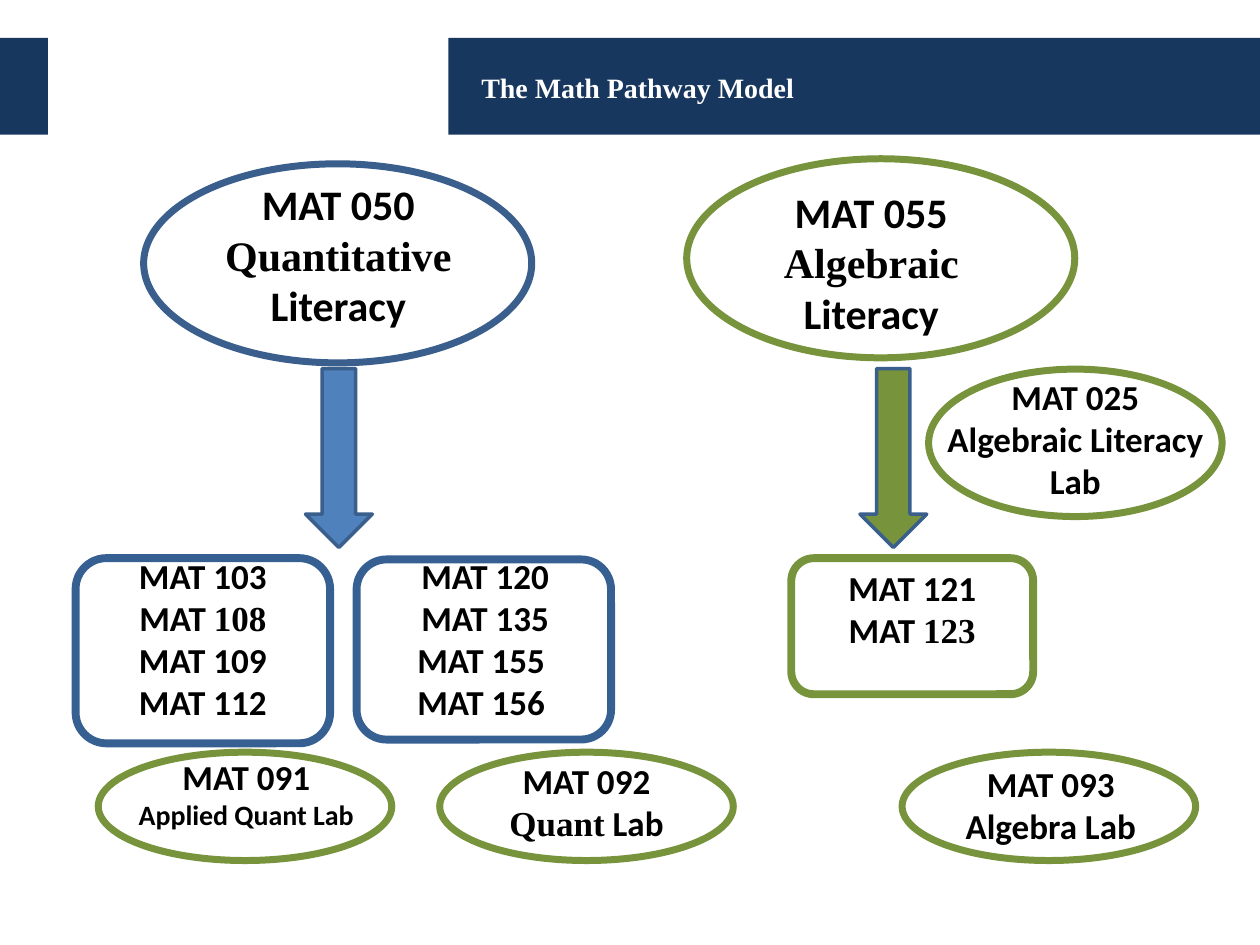
from dataclasses import dataclass

from pptx import Presentation
from pptx.dml.color import RGBColor
from pptx.enum.shapes import MSO_SHAPE as Preset
from pptx.enum.text import MSO_ANCHOR as Anchor, MSO_AUTO_SIZE as AutoSize, PP_ALIGN as Align
from pptx.util import Inches, Pt

NAVY = RGBColor(0x17, 0x37, 0x5E)
BLUE = RGBColor(0x4F, 0x81, 0xBD)
BLUE_EDGE = RGBColor(0x3A, 0x5F, 0x8C)
BLUE_FRAME = RGBColor(0x37, 0x60, 0x92)
GREEN = RGBColor(0x77, 0x93, 0x3C)
WHITE = RGBColor(0xFF, 0xFF, 0xFF)
BLACK = RGBColor(0, 0, 0)
SANS, SERIF = "Calibri", "Times New Roman"

# The slide is a grid of 100 columns by 75 rows
COLS, ROWS = 100, 75
CELL = Inches(0.1)


@dataclass(frozen=True)
class Box:
    col: float
    row: float
    cols: float
    rows: float

    def emu(self) -> list[int]:
        return [round(n * CELL) for n in (self.col, self.row, self.cols, self.rows)]


@dataclass(frozen=True)
class Words:
    text: str
    font: str = SANS
    size: float | None = None


@dataclass(frozen=True)
class Course:
    preset: Preset
    frame: Box
    color: RGBColor
    label: Box
    lines: list[list[Words]]  # one list of runs per paragraph
    size: float = 20


def plain(*lines: str) -> list[list[Words]]:
    return [[Words(line)] for line in lines]


def add_words(paragraph, words: Words, size: float, color: RGBColor) -> None:
    """Add bold text to a paragraph, turning newlines into line breaks."""
    for index, piece in enumerate(words.text.split("\n")):
        if index:
            paragraph.add_line_break()
        run = paragraph.add_run()
        run.text = piece
        run.font.name = words.font
        run.font.size = Pt(words.size or size)
        run.font.bold = True
        run.font.color.rgb = color


def add_form(slide, preset: Preset, box: Box, fill: RGBColor | None = None,
             edge: RGBColor | None = None, width: float = 0):
    form = slide.shapes.add_shape(preset, *box.emu())
    form.shadow.inherit = False
    if fill is None:
        form.fill.background()
    else:
        form.fill.solid()
        form.fill.fore_color.rgb = fill
    if edge is None:
        form.line.fill.background()
    else:
        form.line.color.rgb = edge
        form.line.width = Pt(width)
    return form


def add_course(slide, course: Course) -> None:
    width = 4 if course.preset == Preset.OVAL else 4.5
    add_form(slide, course.preset, course.frame, edge=course.color, width=width)
    frame = slide.shapes.add_textbox(*course.label.emu()).text_frame
    frame.word_wrap = True
    frame.auto_size = AutoSize.NONE
    for index, line in enumerate(course.lines):
        paragraph = frame.add_paragraph() if index else frame.paragraphs[0]
        paragraph.alignment = Align.CENTER
        for words in line:
            add_words(paragraph, words, course.size, BLACK)


def add_header(slide, text: str) -> None:
    for col, cols in ((0, 3.8), (35.6, 64.4)):
        add_form(slide, Preset.RECTANGLE, Box(col, 3, cols, 7.7), fill=NAVY)
    title = slide.shapes.title
    title.left, title.top, title.width, title.height = Box(37.2, 3.6, 42.2, 6.7).emu()
    title.element.getparent().append(title.element)  # in front of the bars
    frame = title.text_frame
    frame.word_wrap = True
    frame.vertical_anchor = Anchor.MIDDLE
    frame.paragraphs[0].alignment = Align.LEFT
    add_words(frame.paragraphs[0], Words(text, SERIF), 16, WHITE)


def add_down_arrow(slide, col: float, fill: RGBColor) -> None:
    arrow = add_form(slide, Preset.LEFT_ARROW, Box(col, 33.7, 14.2, 5.3), fill, BLUE_EDGE, 2)
    arrow.rotation = 270


LITERACY = (30.8, 15.8)  # size of the two entry courses
LAB = (23.3, 8.6)        # size of the labs in the bottom row
LAB_ROW = 59.7

COURSES = [
    # Entry courses
    Course(Preset.OVAL, Box(11.4, 13, *LITERACY), BLUE_EDGE, Box(15.2, 13.7, 23.3, 13.1),
           [[Words("MAT 050")], [Words("Quantitative", SERIF), Words(" Literacy")]], 24),
    Course(Preset.OVAL, Box(54.5, 12.6, *LITERACY), GREEN, Box(58.3, 14.3, 21.7, 13.1),
           [[Words("MAT 055")], [Words("Algebraic", SERIF), Words(" Literacy")]], 24),
    Course(Preset.OVAL, Box(73.7, 29.3, 23.3, 11.7), GREEN, Box(73.7, 29.3, 23.3, 17.8),
           plain("MAT 025", "Algebraic Literacy Lab")),
    # Follow-on courses
    Course(Preset.ROUNDED_RECTANGLE, Box(6, 44.3, 20.2, 14.7), BLUE_FRAME,
           Box(6, 43.5, 20.2, 14.5),
           [[Words("MAT 103")], [Words("MAT "), Words("108", SERIF)],
            *plain("MAT 109", "MAT 112")]),
    Course(Preset.ROUNDED_RECTANGLE, Box(28.3, 44.4, 20.2, 14.3), BLUE_FRAME,
           Box(28.4, 43.5, 20.2, 14.5),
           plain("MAT 120", "MAT 135", "MAT 155 \nMAT 156 ")),
    Course(Preset.ROUNDED_RECTANGLE, Box(62.8, 44.3, 19.2, 10.8), GREEN,
           Box(62.8, 44.5, 19.2, 14.5),
           [[Words("MAT 121")], [Words("MAT "), Words("123", SERIF)]]),
    # Labs
    Course(Preset.OVAL, Box(7.8, LAB_ROW, *LAB), GREEN, Box(8.7, 59.5, 21.7, 14.5),
           [[Words("MAT 091")], [Words("Applied Quant Lab", size=16)]]),
    Course(Preset.OVAL, Box(34.9, LAB_ROW, *LAB), GREEN, Box(34.9, 59.8, 23.3, 14.5),
           [[Words("MAT 092")], [Words("Quant", SERIF), Words(" Lab")]]),
    Course(Preset.OVAL, Box(71.6, LAB_ROW, *LAB), GREEN, Box(71.9, 60, 23, 14.5),
           plain("MAT 093", "Algebra Lab")),
]


def main() -> None:
    deck = Presentation()
    deck.slide_width, deck.slide_height = COLS * CELL, ROWS * CELL
    slide = deck.slides.add_slide(deck.slide_layouts[5])
    add_header(slide, "The Math Pathway Model")
    for col, fill in ((19.8, BLUE), (63.8, GREEN)):
        add_down_arrow(slide, col, fill)
    for course in COURSES:
        add_course(slide, course)
    deck.save("out.pptx")


if __name__ == "__main__":
    main()
